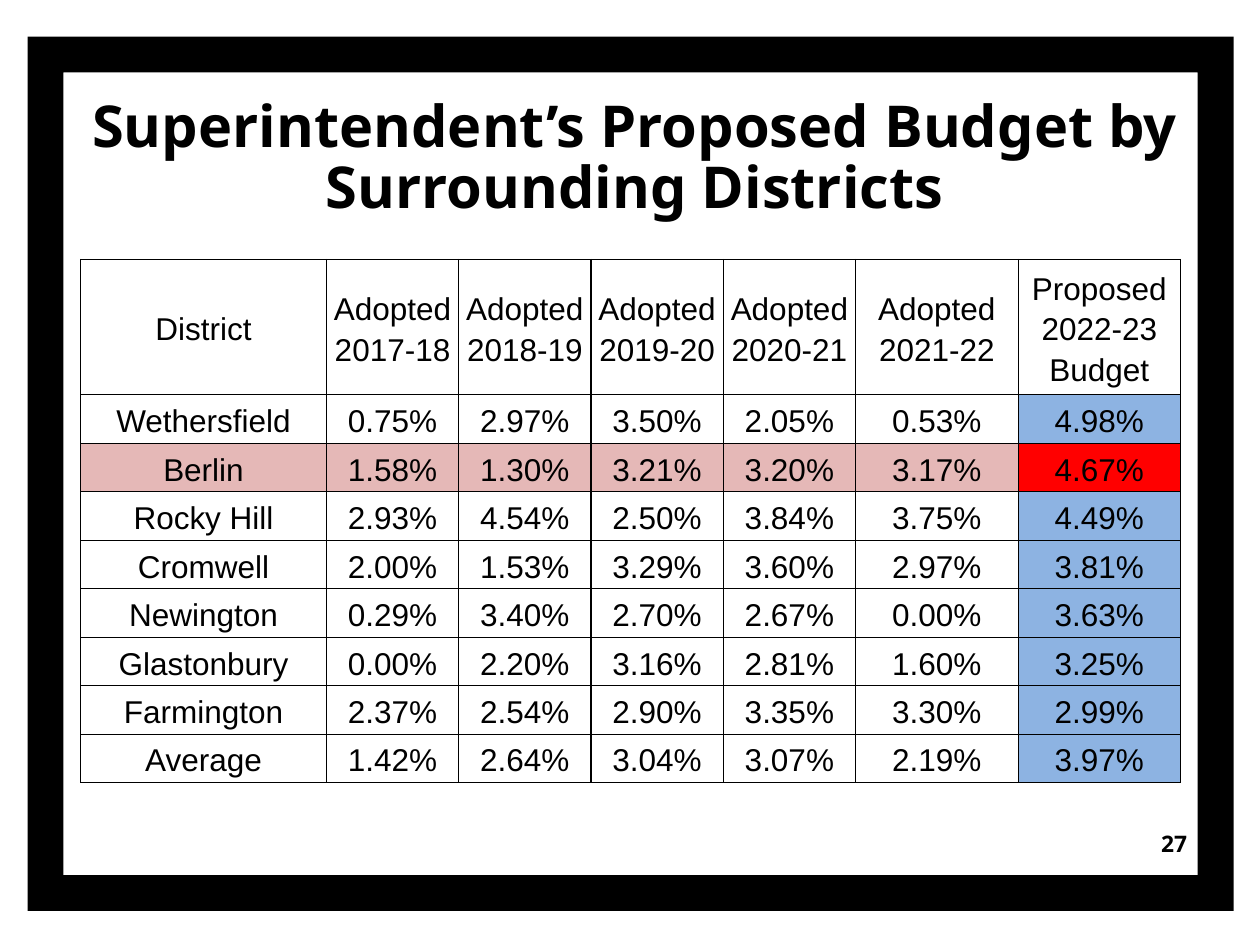
from lxml.etree import SubElement as Sub
from pptx import Presentation
from pptx.dml.color import RGBColor as RGB
from pptx.enum.shapes import MSO_SHAPE as Kind
from pptx.enum.text import MSO_ANCHOR as Anchor, PP_ALIGN as Align
from pptx.oxml.ns import qn
from pptx.util import Inches, Pt

HUES = {"ink": "000000", "paper": "FFFFFF", "blue": "8DB3E2",
        "pink": "E5B8B7", "red": "FF0000"}


def write(frame, text, host=None, font="Noto Sans", size=18, bold=True,
          align=Align.CENTER, lead=1.0, pad=(0.1, 0.1, 0.1, 0.1)):
    """Write text in a frame; host holds the margins (a cell, or the frame)."""
    host = host or frame
    host.vertical_anchor = Anchor.MIDDLE
    for side, gap in zip(("left", "top", "right", "bottom"), pad):
        setattr(host, f"margin_{side}", Inches(gap))
    frame.word_wrap = True
    para = frame.paragraphs[0]
    para.alignment, para.line_spacing = align, lead
    run = para.add_run()
    run.text = text
    run.font.name, run.font.size, run.font.bold = font, Pt(size), bold
    run.font.color.rgb = RGB.from_string(HUES["ink"])


deck = Presentation()
deck.slide_width, deck.slide_height = Inches(10), Inches(7.5)
slide = deck.slides.add_slide(deck.slide_layouts[6])
shapes = slide.shapes

# Black frame
frame = shapes.add_shape(Kind.FRAME, Inches(0.22), Inches(0.29),
                         Inches(9.57), Inches(6.94))
frame.adjustments[0] = 0.041
frame.shadow.inherit = False
frame.fill.solid()
frame.fill.fore_color.rgb = RGB.from_string(HUES["ink"])
frame.line.fill.background()

# Page number and title
page = shapes.add_textbox(Inches(8.92), Inches(6.41), Inches(0.6), Inches(0.57))
write(page.text_frame, "27", size=13, align=Align.RIGHT)
title = shapes.add_textbox(Inches(0.54), Inches(0.5), Inches(8.99), Inches(1.45))
write(title.text_frame, "Superintendent’s Proposed Budget by Surrounding Districts",
      size=33, lead=0.88, pad=(0.1, 0.13, 0.1, 0.05))

# Budget table
years = ["2017-18", "2018-19", "2019-20", "2020-21", "2021-22"]
rows = [["District", *(f"Adopted {year}" for year in years),
         "Proposed 2022-23 Budget"]]
rates = {
    "Wethersfield": (0.75, 2.97, 3.50, 2.05, 0.53, 4.98),
    "Berlin": (1.58, 1.30, 3.21, 3.20, 3.17, 4.67),
    "Rocky Hill": (2.93, 4.54, 2.50, 3.84, 3.75, 4.49),
    "Cromwell": (2.00, 1.53, 3.29, 3.60, 2.97, 3.81),
    "Newington": (0.29, 3.40, 2.70, 2.67, 0.00, 3.63),
    "Glastonbury": (0.00, 2.20, 3.16, 2.81, 1.60, 3.25),
    "Farmington": (2.37, 2.54, 2.90, 3.35, 3.30, 2.99),
    "Average": (1.42, 2.64, 3.04, 3.07, 2.19, 3.97),
}
rows += [[name, *(f"{rate:.2f}%" for rate in line)]
         for name, line in rates.items()]
wide = [1.95] + [1.05] * 4 + [1.29] * 2
tall = [1.03] + [0.38] * len(rates)
table = shapes.add_table(len(rows), len(wide), Inches(0.64), Inches(2.06),
                         Inches(sum(wide)), Inches(sum(tall))).table
table.first_row = table.horz_banding = False
for col, width in zip(table.columns, wide):
    col.width = Inches(width)
for row, height in zip(table.rows, tall):
    row.height = Inches(height)

for r, row in enumerate(rows):
    for c, text in enumerate(row):
        cell = table.cell(r, c)
        write(cell.text_frame, text, host=cell, font="Arial", bold=False,
              lead=1.15, pad=(0.03, 0.02, 0.03, 0.02))
        # Thin black borders come before the fill
        props = cell._tc.get_or_add_tcPr()
        for tag in ("a:lnL", "a:lnR", "a:lnT", "a:lnB"):
            edge = Sub(props, qn(tag), w=str(Pt(0.75)))
            Sub(Sub(edge, qn("a:solidFill")), qn("a:srgbClr"), val=HUES["ink"])
        # Berlin stands out, and so does the proposed budget
        last, ours = c == len(wide) - 1, row[0] == "Berlin"
        if ours:
            hue = "red" if last else "pink"
        else:
            hue = "blue" if last and r else "paper"
        cell.fill.solid()
        cell.fill.fore_color.rgb = RGB.from_string(HUES[hue])

deck.save("out.pptx")
